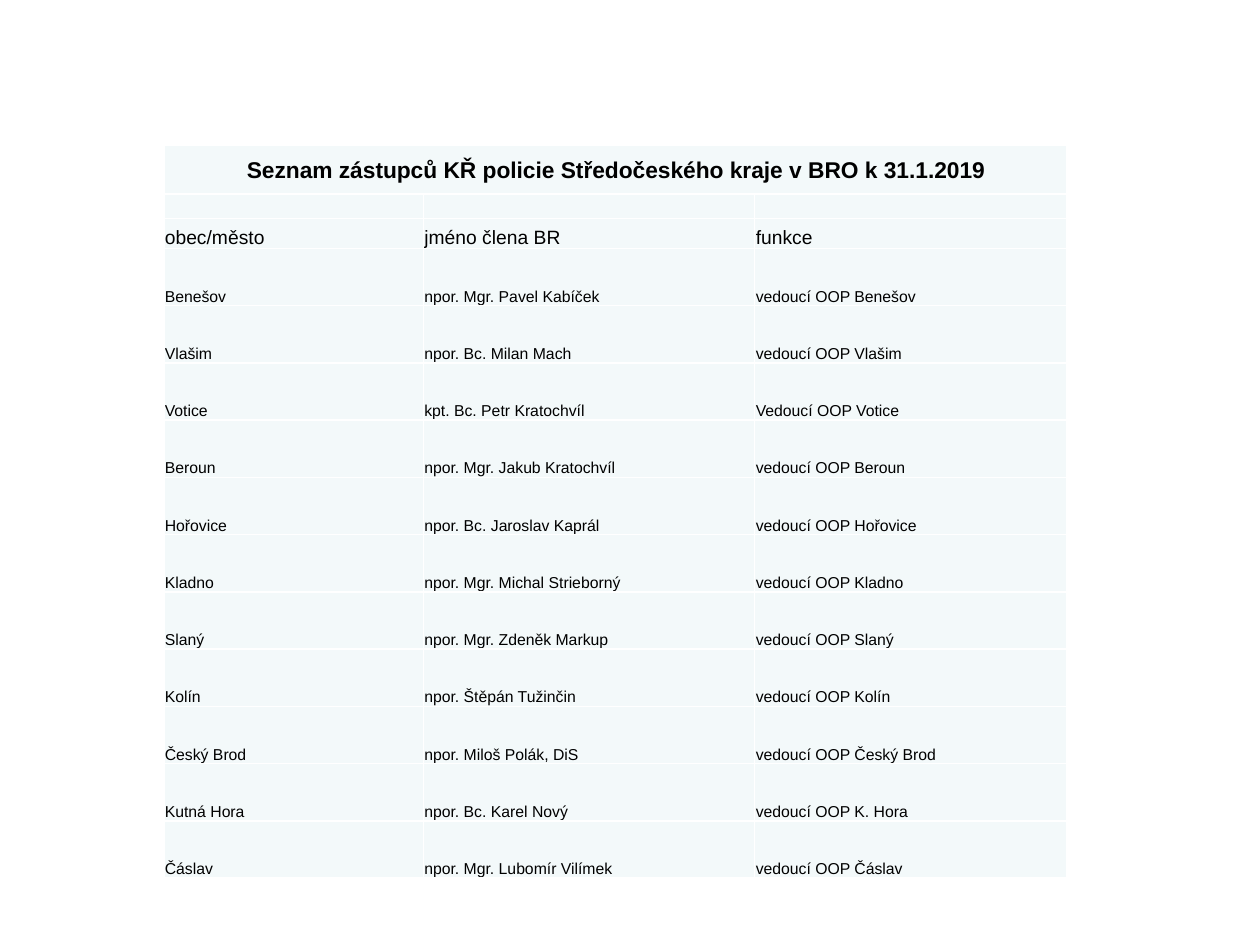
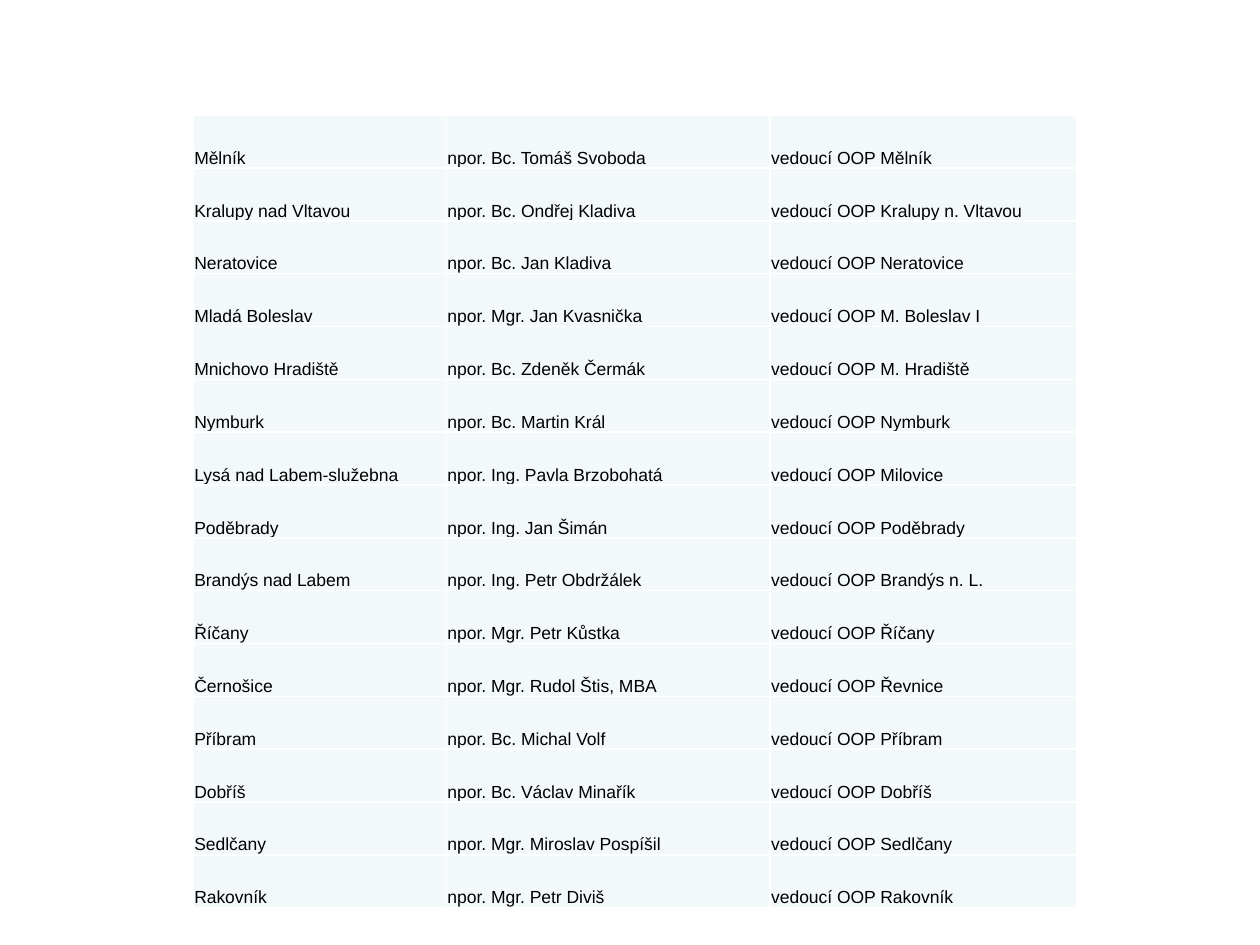
from dataclasses import dataclass

from lxml.etree import SubElement
from pptx import Presentation
from pptx.dml.color import RGBColor
from pptx.enum.text import MSO_ANCHOR as Anchor, PP_ALIGN as Align
from pptx.oxml.ns import qn
from pptx.util import Pt


@dataclass(frozen=True)
class Theme:
    font: str = "Arial"
    text: str = "000000"
    cell: str = "F3F9FA"
    border: str = "FFFFFF"
    border_width: float = 1
    inset: float = 0.6
    title_size: float = 13
    header_size: float = 11
    body_size: float = 9
    large_body_size: float = 10


class RosterDeck:
    def __init__(self, theme):
        self.theme = theme
        self.deck = Presentation()
        self.deck.slide_width, self.deck.slide_height = Pt(720), Pt(540)
        self.page = None

    def add_page(self):
        self.page = self.deck.slides.add_slide(self.deck.slide_layouts[6])

    def add_table(self, left, top, widths, heights):
        """Add an empty table in which every cell has the shared look."""
        frame = self.page.shapes.add_table(
            len(heights), len(widths), Pt(left), Pt(top), Pt(sum(widths)), Pt(sum(heights)))
        table = frame.table
        table.first_row = table.horz_banding = False
        for column, width in zip(table.columns, widths):
            column.width = Pt(width)
        for row, height in zip(table.rows, heights):
            row.height = Pt(height)
        for cell in table.iter_cells():
            self.style_cell(cell)
        return table

    def style_cell(self, cell):
        cell.margin_left = cell.margin_right = cell.margin_top = Pt(self.theme.inset)
        cell.margin_bottom = 0
        cell.vertical_anchor = Anchor.BOTTOM
        properties = cell._tc.get_or_add_tcPr()
        for side in ("a:lnL", "a:lnR", "a:lnT", "a:lnB"):
            line = SubElement(properties, qn(side), w=str(Pt(self.theme.border_width)))
            SubElement(SubElement(line, qn("a:solidFill")), qn("a:srgbClr"), val=self.theme.border)
        cell.fill.solid()
        cell.fill.fore_color.rgb = RGBColor.from_string(self.theme.cell)

    def add_text(self, cell, text, size, bold=False):
        span = cell.text_frame.paragraphs[0].add_run()
        span.text = text
        span.font.name, span.font.size, span.font.bold = self.theme.font, Pt(size), bold
        span.font.color.rgb = RGBColor.from_string(self.theme.text)

    def fill_row(self, table, row, texts, size):
        for column, text in enumerate(texts):
            self.add_text(table.cell(row, column), text, size)

    def add_title(self, table, text):
        """Put a heading across the whole first row."""
        cell = table.cell(0, 0)
        cell.merge(table.cell(0, len(table.columns) - 1))
        cell.vertical_anchor = Anchor.MIDDLE
        cell.text_frame.paragraphs[0].alignment = Align.CENTER
        self.add_text(cell, text, self.theme.title_size, bold=True)

    def keep_row_low(self, table, row):
        """Give an empty row the body size, so that it keeps its height."""
        for cell in table.rows[row].cells:
            SubElement(cell.text_frame.paragraphs[0]._p, qn("a:endParaRPr"),
                       sz=str(int(self.theme.body_size * 100)))


TITLE = "Seznam zástupců KŘ policie Středočeského kraje v BRO k 31.1.2019"
HEADERS = ("obec/město", "jméno člena BR", "funkce")
FIRST_MEMBERS = [
    ("Benešov", "npor. Mgr. Pavel Kabíček", "vedoucí OOP Benešov"),
    ("Vlašim", "npor. Bc. Milan Mach", "vedoucí OOP Vlašim"),
    ("Votice", "kpt. Bc. Petr Kratochvíl", "Vedoucí OOP Votice"),
    ("Beroun", "npor. Mgr. Jakub Kratochvíl", "vedoucí OOP Beroun"),
    ("Hořovice", "npor. Bc. Jaroslav Kaprál", "vedoucí OOP Hořovice"),
    ("Kladno", "npor. Mgr. Michal Strieborný", "vedoucí OOP Kladno"),
    ("Slaný", "npor. Mgr. Zdeněk Markup", "vedoucí OOP Slaný"),
    ("Kolín", "npor. Štěpán Tužinčin", "vedoucí OOP Kolín"),
    ("Český Brod", "npor. Miloš Polák, DiS", "vedoucí OOP Český Brod"),
    ("Kutná Hora", "npor. Bc. Karel Nový", "vedoucí OOP K. Hora"),
    ("Čáslav", "npor. Mgr. Lubomír Vilímek", "vedoucí OOP Čáslav"),
]
MORE_MEMBERS = [
    ("Mělník", "npor. Bc. Tomáš Svoboda", "vedoucí OOP Mělník"),
    ("Kralupy nad Vltavou", "npor. Bc. Ondřej Kladiva", "vedoucí OOP Kralupy n. Vltavou"),
    ("Neratovice", "npor. Bc. Jan Kladiva", "vedoucí OOP Neratovice"),
    ("Mladá Boleslav", "npor. Mgr. Jan Kvasnička", "vedoucí OOP M. Boleslav I"),
    ("Mnichovo Hradiště", "npor. Bc. Zdeněk Čermák", "vedoucí OOP M. Hradiště"),
    ("Nymburk", "npor. Bc. Martin Král", "vedoucí OOP Nymburk"),
    ("Lysá nad Labem-služebna", "npor. Ing. Pavla Brzobohatá", "vedoucí OOP Milovice"),
    ("Poděbrady", "npor. Ing. Jan Šimán", "vedoucí OOP Poděbrady"),
    ("Brandýs nad Labem", "npor. Ing. Petr Obdržálek", "vedoucí OOP Brandýs n. L."),
    ("Říčany", "npor. Mgr. Petr Kůstka", "vedoucí OOP Říčany"),
    ("Černošice", "npor. Mgr. Rudol Štis, MBA", "vedoucí OOP Řevnice"),
    ("Příbram", "npor. Bc. Michal Volf", "vedoucí OOP Příbram"),
    ("Dobříš", "npor. Bc. Václav Minařík", "vedoucí OOP Dobříš"),
    ("Sedlčany", "npor. Mgr. Miroslav Pospíšil", "vedoucí OOP Sedlčany"),
    ("Rakovník", "npor. Mgr. Petr Diviš", "vedoucí OOP Rakovník"),
]


def build_first_page(roster):
    roster.add_page()
    heights = [28, 14, 17] + [32.73] * len(FIRST_MEMBERS)
    table = roster.add_table(93.6, 83, (148.3, 189.4, 178.6), heights)
    roster.add_title(table, TITLE)
    roster.keep_row_low(table, 1)
    roster.fill_row(table, 2, HEADERS, roster.theme.header_size)
    for row, member in enumerate(FIRST_MEMBERS, start=3):
        roster.fill_row(table, row, member, roster.theme.body_size)


def build_second_page(roster):
    roster.add_page()
    table = roster.add_table(110.4, 65.8, (144.7, 185, 175), [30.2] * len(MORE_MEMBERS))
    for row, member in enumerate(MORE_MEMBERS):
        roster.fill_row(table, row, member, roster.theme.large_body_size)


def main():
    roster = RosterDeck(Theme())
    build_first_page(roster)
    build_second_page(roster)
    roster.deck.save("out.pptx")


if __name__ == "__main__":
    main()
